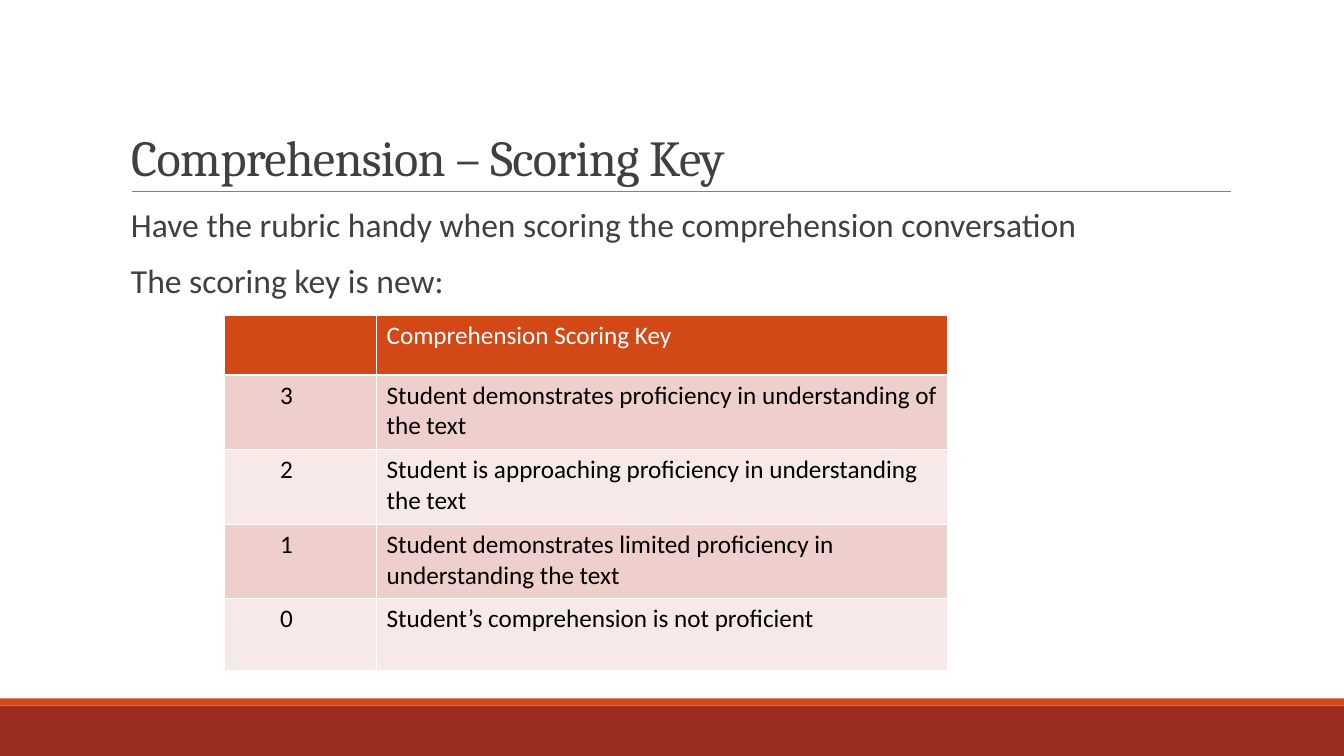
import lxml.etree
import pptx
import pptx.dml.color
import pptx.enum.shapes
import pptx.enum.text
import pptx.oxml.ns
import pptx.util

Cm = pptx.util.Cm
Pt = pptx.util.Pt
qn = pptx.oxml.ns.qn


def color(code):
    return pptx.dml.color.RGBColor.from_string(code)


def style(para, size, code, face="Calibri"):
    for run in para.runs:
        run.font.size = Pt(size)
        run.font.name = face
        run.font.bold = False
        run.font.color.rgb = color(code)


deck = pptx.Presentation()
deck.slide_width = Cm(33.87)
deck.slide_height = Cm(19.05)
slide = deck.slides.add_slide(deck.slide_layouts[5])
shapes = slide.shapes

# Footer bands
for top, height, code in [(17.78, 1.27, "9B2D1F"), (17.6, 0.18, "D34817")]:
    band = shapes.add_shape(pptx.enum.shapes.MSO_SHAPE.RECTANGLE,
                            0, Cm(top), deck.slide_width, Cm(height))
    band.shadow.inherit = False
    band.fill.solid()
    band.fill.fore_color.rgb = color(code)
    band.line.fill.background()

# Title and rule
title = shapes.title
title.left, title.top = Cm(3.05), Cm(0.79)
title.width, title.height = Cm(27.94), Cm(4.04)
frame = title.text_frame
frame.text = "Comprehension – Scoring Key"
frame.word_wrap = True
frame.auto_size = pptx.enum.text.MSO_AUTO_SIZE.NONE
frame.vertical_anchor = pptx.enum.text.MSO_ANCHOR.BOTTOM
head = frame.paragraphs[0]
head.alignment = pptx.enum.text.PP_ALIGN.LEFT
head.line_spacing = 0.85
style(head, 36, "404040", "Cambria")
head.runs[0].font._element.set("spc", "-50")

rule = shapes.add_connector(pptx.enum.shapes.MSO_CONNECTOR.STRAIGHT,
                            Cm(3.33), Cm(4.83), Cm(31.01), Cm(4.83))
rule.line.color.rgb = color("808080")
rule.line.width = Pt(0.5)
lxml.etree.SubElement(rule._element.spPr, qn("a:effectLst"))

# Body text
body = shapes.add_textbox(Cm(3.05), Cm(5.13), Cm(25.68), Cm(11.18))
frame = body.text_frame
frame.word_wrap = True
frame.margin_left = Cm(0.25)
frame.margin_right = 0
frame.text = ("Have the rubric handy when scoring the comprehension conversation\n"
              "The scoring key is new:")
for para in frame.paragraphs:
    para.line_spacing = 0.9
    para.space_before = Pt(12)
    para.space_after = Pt(2)
    style(para, 24, "404040")

# Scoring key
rows = [
    ("", "Comprehension Scoring Key"),
    ("3", "Student demonstrates proficiency in understanding of the text"),
    ("2", "Student is approaching proficiency in understanding the text"),
    ("1", "Student demonstrates limited proficiency in understanding the text"),
    ("0", "Student’s comprehension is not proficient"),
]
table = shapes.add_table(len(rows), 2, Cm(5.66), Cm(7.95), Cm(18.23), Cm(8.94)).table
table.columns[0].width = Cm(3.83)
table.columns[1].width = Cm(14.4)
for row, height in zip(table.rows, [1.5, 1.88, 1.88, 1.88, 1.8]):
    row.height = Cm(height)

for r, texts in enumerate(rows):
    if r == 0:
        fill, ink = "D34817", "FFFFFF"
    else:
        fill, ink = ("EFCFCC" if r % 2 else "F7E9E8"), "000000"
    for c, text in enumerate(texts):
        cell = table.cell(r, c)
        cell.text_frame.text = text
        style(cell.text_frame.paragraphs[0], 18, ink)
        if c == 0:
            cell.margin_left = Cm(1.4)
        props = cell._tc.get_or_add_tcPr()
        for side in ("lnL", "lnR", "lnT", "lnB"):
            edge = lxml.etree.SubElement(props, qn("a:" + side), w=str(Pt(1)))
            paint = lxml.etree.SubElement(edge, qn("a:solidFill"))
            lxml.etree.SubElement(paint, qn("a:srgbClr"), val="FFFFFF")
        cell.fill.solid()
        cell.fill.fore_color.rgb = color(fill)

deck.save("out.pptx")
